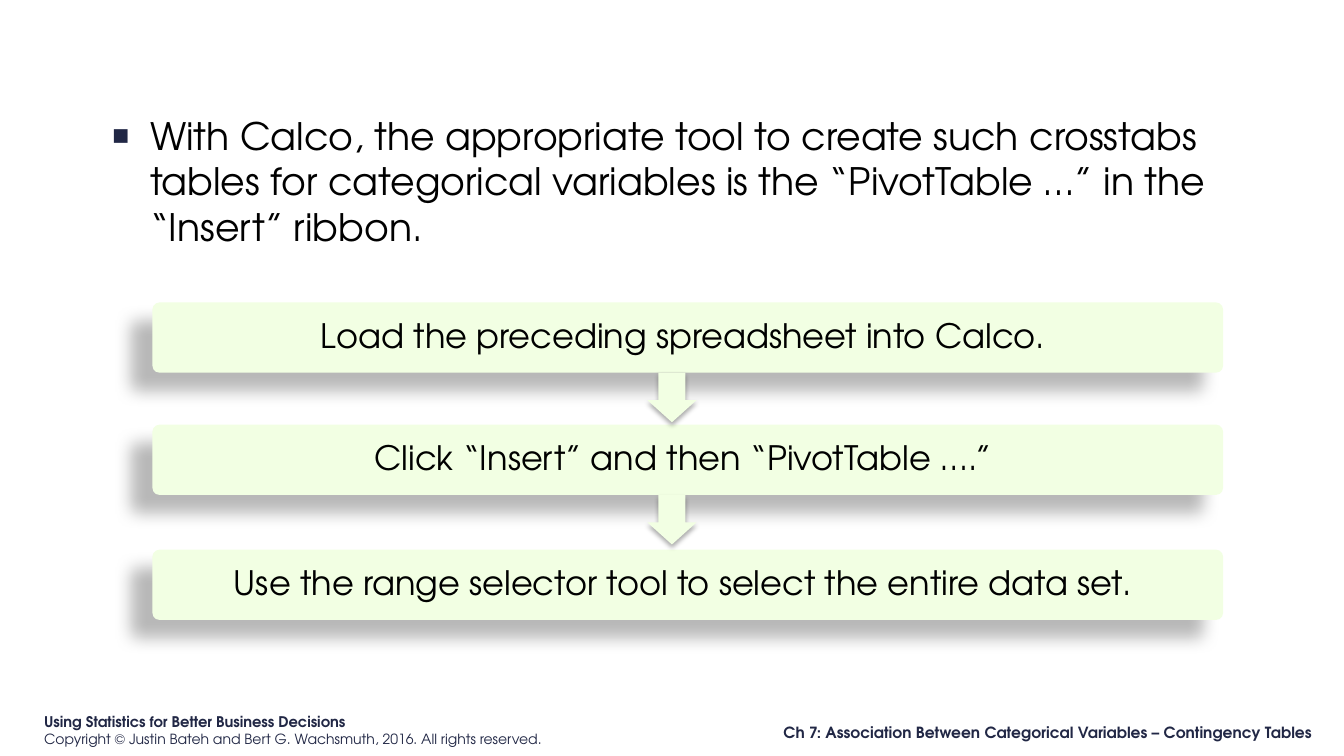
from lxml.etree import SubElement as Sub
from pptx import Presentation
from pptx.dml.color import RGBColor as Rgb
from pptx.enum.shapes import MSO_SHAPE as Kind
from pptx.enum.text import MSO_ANCHOR as Anchor, PP_ALIGN as Align
from pptx.oxml.ns import qn
from pptx.util import Pt

FONT = "TeX Gyre Adventor"
HUES = {"navy": "212745", "black": "000000", "mint": "F2FFE3"}


def add_run(para, text, size, hue, bold=False):
    run = para.add_run()
    run.text = text
    font = run.font
    font.name, font.size, font.bold = FONT, Pt(size), bold
    font.color.rgb = Rgb.from_string(HUES[hue])


def add_block(kind, box, blur, dist, angle, alpha):
    """Add a mint shape with an outer shadow (points, degrees, percent)."""
    shape = slide.shapes.add_shape(kind, *map(Pt, box))
    shape.fill.solid()
    shape.fill.fore_color.rgb = Rgb.from_string(HUES["mint"])
    shape.line.fill.background()
    shape.shadow.inherit = False
    glow = shape._element.spPr.find(qn("a:effectLst"))
    outer = Sub(glow, qn("a:outerShdw"), blurRad=str(Pt(blur)),
                dist=str(Pt(dist)), dir=str(angle * 60000),
                algn="ctr", rotWithShape="0")
    tint = Sub(outer, qn("a:srgbClr"), val=HUES["black"])
    Sub(tint, qn("a:alpha"), val=str(alpha * 1000))
    return shape


deck = Presentation()
deck.slide_width, deck.slide_height = Pt(960), Pt(540)
slide = deck.slides.add_slide(deck.slide_layouts[6])

# Footer on the left
foot = slide.shapes.add_textbox(Pt(24.5), Pt(505.5), Pt(380), Pt(29)).text_frame
foot.word_wrap = True
add_run(foot.paragraphs[0], "Using Statistics for Better Business Decisions",
        10.5, "navy", True)
para = foot.add_paragraph()
para.space_after = Pt(1)
add_run(para, "Copyright © Justin Bateh and Bert G. Wachsmuth, 2016. "
        "All rights reserved.", 10, "navy")

# Steps, with an arrow from each to the next
steps = [
    (216, "Load the preceding spreadsheet into Calco. "),
    (303.3, "Click “Insert” and then “PivotTable ….” "),
    (392.6, "Use the range selector tool to select the entire data set. "),
]
LEFT, WIDE, HIGH = 108.9, 764.8, 50.2
for top, text in steps:
    step = add_block(Kind.ROUNDED_RECTANGLE, (LEFT, top, WIDE, HIGH),
                     11.8, 19.7, 141, 28)
    step.adjustments[0] = 0.1
    frame = step.text_frame
    frame.word_wrap = True
    frame.vertical_anchor = Anchor.MIDDLE
    frame.margin_left = frame.margin_right = Pt(5)
    frame.margin_top = frame.margin_bottom = Pt(4.3)
    para = frame.paragraphs[0]
    para.alignment = Align.CENTER
    para.line_spacing = 0.9
    para.space_after = Pt(8.4)
    add_run(para, text, 24, "black")

for top, _ in steps[:-1]:
    arrow = add_block(Kind.DOWN_ARROW, (462.4, top + HIGH, 35.2, 35.4),
                      3.5, 2.2, 90, 32)
    arrow.adjustments[0] = 0.55
    arrow.adjustments[1] = 0.45

# Bullet above the steps
body = slide.shapes.add_textbox(Pt(67.7), Pt(77), Pt(844), Pt(120)).text_frame
body.word_wrap = True
para = body.paragraphs[0]
para.space_before = para.space_after = Pt(6)
props = para._p.get_or_add_pPr()
props.set("marL", str(Pt(32.4)))
props.set("indent", str(Pt(-27.4)))
Sub(Sub(props, qn("a:buClr")), qn("a:srgbClr"), val=HUES["navy"])
Sub(props, qn("a:buSzPct"), val="95000")
Sub(props, qn("a:buFont"), typeface=FONT)
Sub(props, qn("a:buChar"), char="▪")
add_run(para, "With Calco, the appropriate tool to create such crosstabs tables "
        "for categorical variables is the “PivotTable …” in the “Insert” ribbon.",
        27, "black")

# Chapter line on the right
note = slide.shapes.add_textbox(Pt(468), Pt(512), Pt(476.6), Pt(21)).text_frame
note.word_wrap = True
note.vertical_anchor = Anchor.BOTTOM
para = note.paragraphs[0]
para.alignment = Align.RIGHT
add_run(para, "Ch 7: Association Between Categorical Variables – "
        "Contingency Tables", 11, "navy", True)

deck.save("out.pptx")
